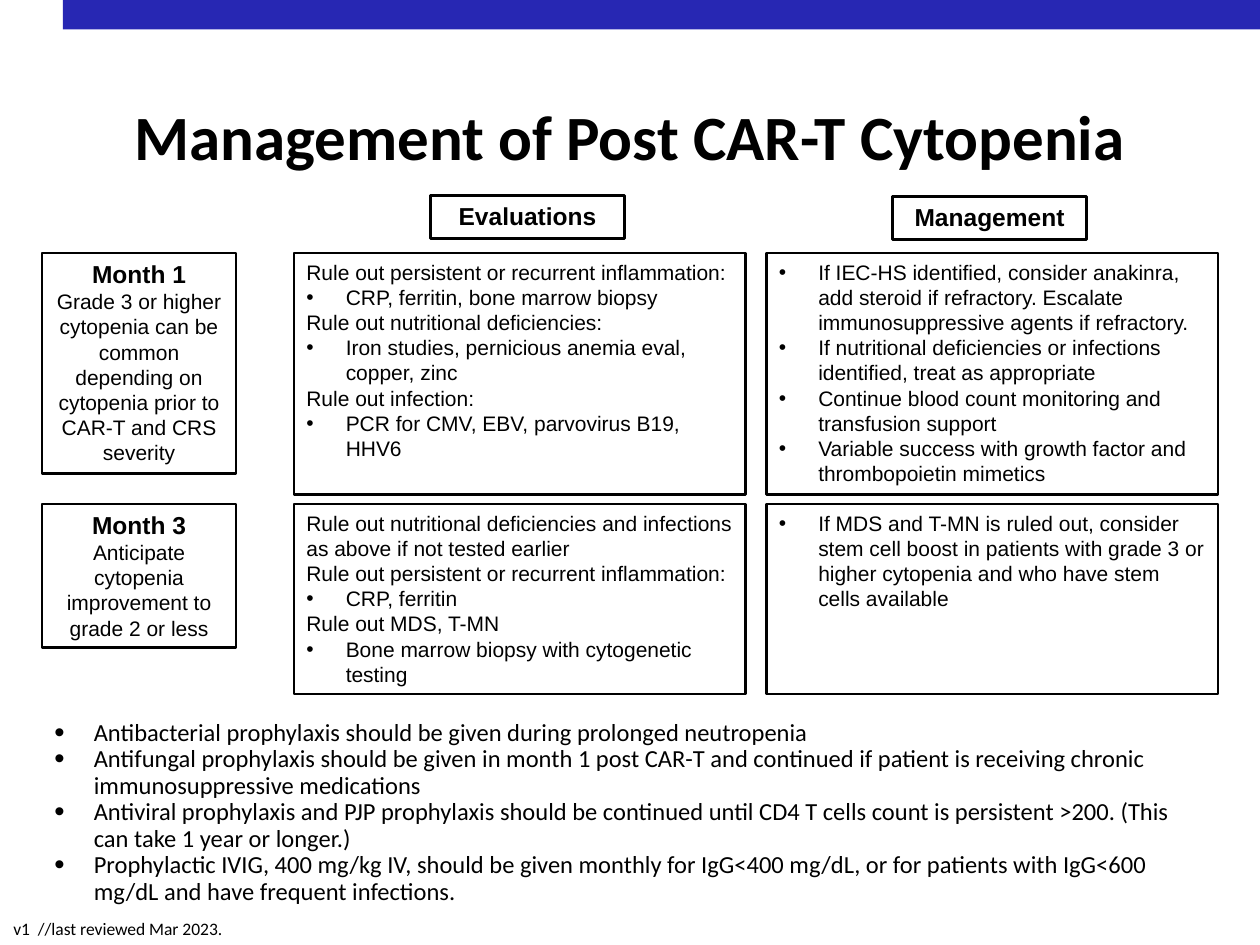
from dataclasses import dataclass
from lxml import etree
from pptx import Presentation
from pptx import util as u
from pptx.dml.color import RGBColor
from pptx.enum import shapes, text
from pptx.oxml import ns


@dataclass
class Theme:
    ink: RGBColor = RGBColor(0, 0, 0)
    bar: RGBColor = RGBColor(0x27, 0x27, 0xB3)
    sans: str = "Arial"
    main: str = "Calibri"
    title: int = 36
    head: int = 14
    cell: int = 12
    foot: int = 10
    edge: float = 1.5


look = Theme()
deck = Presentation()
deck.slide_width, deck.slide_height = u.Inches(10), u.Inches(7.5)
unit = deck.slide_width / 120
slide = deck.slides.add_slide(deck.slide_layouts[6])


def grid(*cells):
    return [u.Emu(round(n * unit)) for n in cells]


def write(lines, at, size=look.cell, face=look.sans, bold=False,
          mid=False, lead=None, dot=100, wrap=True, box=True):
    if box:
        item = slide.shapes.add_shape(shapes.MSO_SHAPE.RECTANGLE, *grid(*at))
        item.shadow.inherit = False
        item.fill.background()
        item.line.color.rgb = look.ink
        item.line.width = u.Pt(look.edge)
    else:
        item = slide.shapes.add_textbox(*grid(*at))
    frame = item.text_frame
    frame.word_wrap = wrap
    frame.vertical_anchor = text.MSO_ANCHOR.TOP
    for i, line in enumerate(lines):
        para = frame.paragraphs[0] if i == 0 else frame.add_paragraph()
        para.alignment = text.PP_ALIGN.CENTER if mid else text.PP_ALIGN.LEFT
        if lead:
            para.line_spacing = lead
        if line.startswith("• "):
            prop = para._p.get_or_add_pPr()
            dent = grid(3.75)[0]
            prop.set("marL", str(dent))
            prop.set("indent", str(-dent))
            for tag, key, val in (("a:buSzPct", "val", str(dot * 1000)),
                                  ("a:buFont", "typeface", look.sans),
                                  ("a:buChar", "char", "•")):
                etree.SubElement(prop, ns.qn(tag)).set(key, val)
        top = line.startswith("# ")
        run = para.add_run()
        run.text = line.removeprefix("• ").removeprefix("# ")
        run.font.name = face
        run.font.size = u.Pt(look.head if top else size)
        run.font.bold = bold or top
        run.font.color.rgb = look.ink


bar = slide.shapes.add_shape(shapes.MSO_SHAPE.RECTANGLE, *grid(6, 0, 114, 2.8))
bar.shadow.inherit = False
bar.fill.solid()
bar.fill.fore_color.rgb = look.bar
bar.line.fill.background()

write(["Management of Post CAR-T Cytopenia"], (9, 9.5, 102, 15.1),
      size=look.title, face=look.main, bold=True, mid=True, lead=0.9, box=False)
write(["• Antibacterial prophylaxis should be given during prolonged neutropenia",
       "• Antifungal prophylaxis should be given in month 1 post CAR-T and continued "
       "if patient is receiving chronic immunosuppressive medications",
       "• Antiviral prophylaxis and PJP prophylaxis should be continued until CD4 T cells "
       "count is persistent >200. (This can take 1 year or longer.)",
       "• Prophylactic IVIG, 400 mg/kg IV, should be given monthly for IgG<400 mg/dL, "
       "or for patients with IgG<600 mg/dL and have frequent infections."],
      (4, 68, 112, 10), size=look.head, face=look.main, lead=0.9, dot=120, box=False)
write(["v1  //last reviewed Mar 2023."], (0.1, 86.8, 23, 3.2),
      size=look.foot, face=look.main, wrap=False, box=False)

for name, left, top in (("Evaluations", 41, 18.6), ("Management", 85, 18.7)):
    write([f"# {name}"], (left, top, 18.5, 4.1), mid=True)

cols = (4, 28, 73)
rows = (
    (24.1, 23, 21,
     ["# Month 1",
      "Grade 3 or higher cytopenia can be common depending on cytopenia prior to "
      "CAR-T and CRS severity"],
     ["Rule out persistent or recurrent inflammation:",
      "• CRP, ferritin, bone marrow biopsy",
      "Rule out nutritional deficiencies:",
      "• Iron studies, pernicious anemia eval, copper, zinc",
      "Rule out infection:",
      "• PCR for CMV, EBV, parvovirus B19, HHV6"],
     ["• If IEC-HS identified, consider anakinra, add steroid if refractory. "
      "Escalate immunosuppressive agents if refractory.",
      "• If nutritional deficiencies or infections identified, treat as appropriate",
      "• Continue blood count monitoring and transfusion support",
      "• Variable success with growth factor and thrombopoietin mimetics"]),
    (48, 18.1, 13.7,
     ["# Month 3",
      "Anticipate cytopenia improvement to grade 2 or less"],
     ["Rule out nutritional deficiencies and infections as above if not tested earlier",
      "Rule out persistent or recurrent inflammation:",
      "• CRP, ferritin",
      "Rule out MDS, T-MN",
      "• Bone marrow biopsy with cytogenetic testing"],
     ["• If MDS and T-MN is ruled out, consider stem cell boost in patients with "
      "grade 3 or higher cytopenia and who have stem cells available"]),
)
for top, tall, short, month, tests, care in rows:
    write(month, (cols[0], top, 18.5, short), mid=True)
    for left, lines in zip(cols[1:], (tests, care)):
        write(lines, (left, top, 43, tall))

deck.save("out.pptx")
